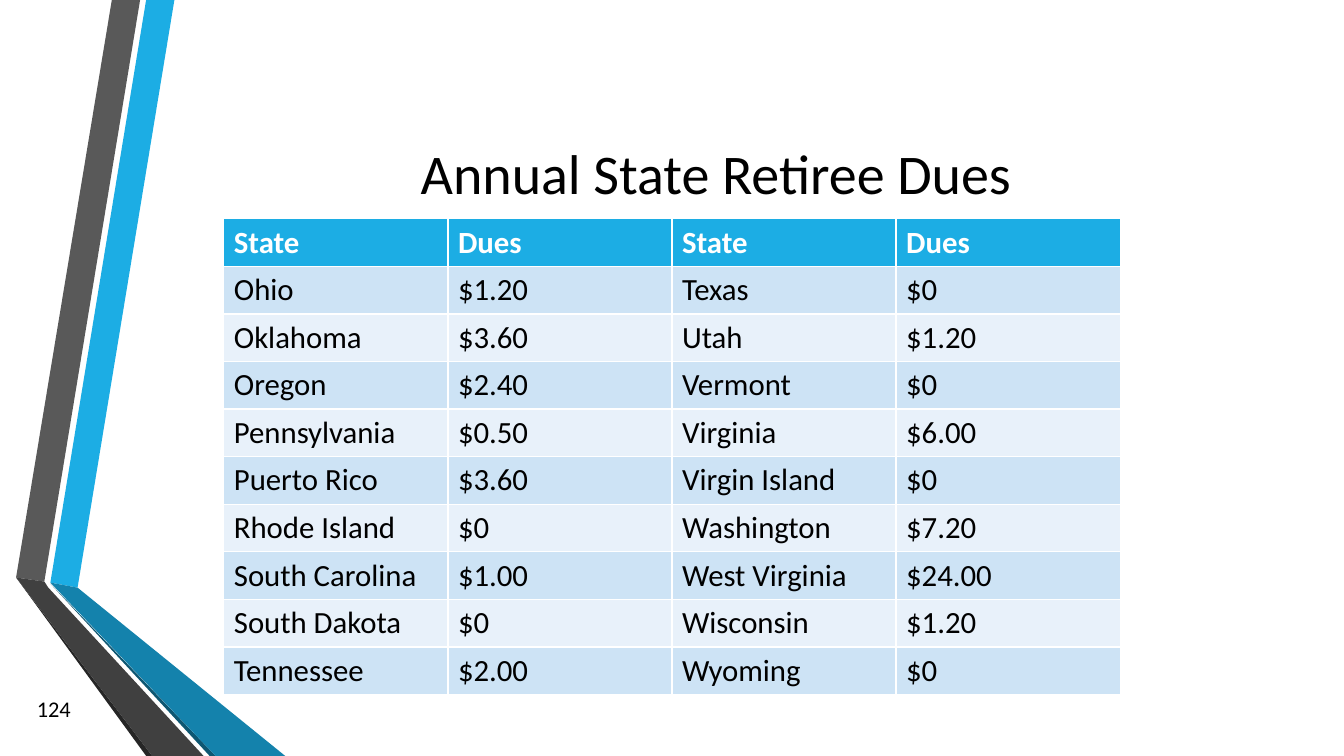
from pptx import Presentation
from pptx.dml.color import RGBColor
from pptx.enum.text import MSO_ANCHOR, PP_ALIGN
from pptx.util import Inches, Pt

MIDDLE = MSO_ANCHOR.MIDDLE
LEFT, CENTER, RIGHT = PP_ALIGN.LEFT, PP_ALIGN.CENTER, PP_ALIGN.RIGHT
TITLE_ONLY = 5
FONT = "Calibri"
COLORS = {
    "blue": "1CADE4", "blue_dark": "1482AC", "blue_edge": "0E5772",
    "gray": "595959", "gray_dark": "404040", "gray_edge": "262626",
    "band": "CDE3F5", "band_light": "E8F1FA",
    "white": "FFFFFF", "black": "000000",
}

# Ribbon outlines in inches, from back to front
RIBBONS = [
    ("blue", [(0.5, 5.78), (0.77, 5.83), (1.73, 0), (1.45, 0)]),
    ("gray", [(1.39, 0), (1.11, 0), (0.16, 5.73), (0.44, 5.77)]),
    ("gray_edge", [(0.16, 5.73), (1.45, 7.5), (1.51, 7.5)]),
    ("blue_edge", [(0.5, 5.79), (2.08, 7.5), (2.14, 7.5)]),
    ("blue_dark", [(0.5, 5.78), (2.14, 7.5), (2.83, 7.5), (0.77, 5.83)]),
    ("gray_dark", [(2.02, 7.5), (0.48, 5.83), (0.44, 5.77), (0.16, 5.73),
                   (1.51, 7.5)]),
]

DUES = [
    ("State", "Dues", "State", "Dues"),
    ("Ohio", "$1.20", "Texas", "$0"),
    ("Oklahoma", "$3.60", "Utah", "$1.20"),
    ("Oregon", "$2.40", "Vermont", "$0"),
    ("Pennsylvania", "$0.50", "Virginia", "$6.00"),
    ("Puerto Rico", "$3.60", "Virgin Island", "$0"),
    ("Rhode Island", "$0", "Washington", "$7.20"),
    ("South Carolina", "$1.00", "West Virginia", "$24.00"),
    ("South Dakota", "$0", "Wisconsin", "$1.20"),
    ("Tennessee", "$2.00", "Wyoming", "$0"),
]


def rgb(name):
    return RGBColor.from_string(COLORS[name])


def write(tf, text, size, color="black", bold=False, align=LEFT):
    p = tf.paragraphs[0]
    p.alignment = align
    r = p.add_run()
    r.text = text
    r.font.name = FONT
    r.font.size = Pt(size)
    r.font.bold = bold
    r.font.color.rgb = rgb(color)


def add_ribbons(s, left, top):
    for color, points in RIBBONS:
        points = [(left + Inches(x), top + Inches(y)) for x, y in points]
        outline = s.shapes.build_freeform(*points[0])
        outline.add_line_segments(points[1:], close=True)
        sp = outline.convert_to_shape()
        sp.shadow.inherit = False
        sp.fill.solid()
        sp.fill.fore_color.rgb = rgb(color)
        sp.line.fill.background()


def add_dues_table(s, left, top, width, height):
    table = s.shapes.add_table(len(DUES), len(DUES[0]), left, top,
                               width, height).table
    for i, row in enumerate(DUES):
        header = i == 0
        fill = "blue" if header else "band" if i % 2 else "band_light"
        for j, text in enumerate(row):
            cell = table.cell(i, j)
            cell.fill.solid()
            cell.fill.fore_color.rgb = rgb(fill)
            cell.vertical_anchor = MIDDLE
            write(cell.text_frame, text, 22, bold=header,
                  color="white" if header else "black")


def set_title(s, text, left, top, width, height):
    title = s.shapes.title
    title.left, title.top, title.width, title.height = left, top, width, height
    title.text_frame.vertical_anchor = MIDDLE
    write(title.text_frame, text, 40, align=CENTER)


def add_page_number(s, text, left, top, width, height):
    tf = s.shapes.add_textbox(left, top, width, height).text_frame
    tf.word_wrap = True
    tf.vertical_anchor = MIDDLE
    write(tf, text, 16, align=RIGHT)


def main():
    prs = Presentation()
    prs.slide_width, prs.slide_height = Inches(13.33), Inches(7.5)
    s = prs.slides.add_slide(prs.slide_layouts[TITLE_ONLY])
    add_ribbons(s, Inches(0), Inches(0))
    add_dues_table(s, Inches(2.22), Inches(2.17), Inches(8.89), Inches(4.67))
    set_title(s, "Annual State Retiree Dues",
              Inches(1.62), Inches(0.75), Inches(10.96), Inches(1.92))
    add_page_number(s, "124", Inches(0.2), Inches(6.83), Inches(0.6), Inches(0.4))
    prs.save("out.pptx")


if __name__ == "__main__":
    main()
